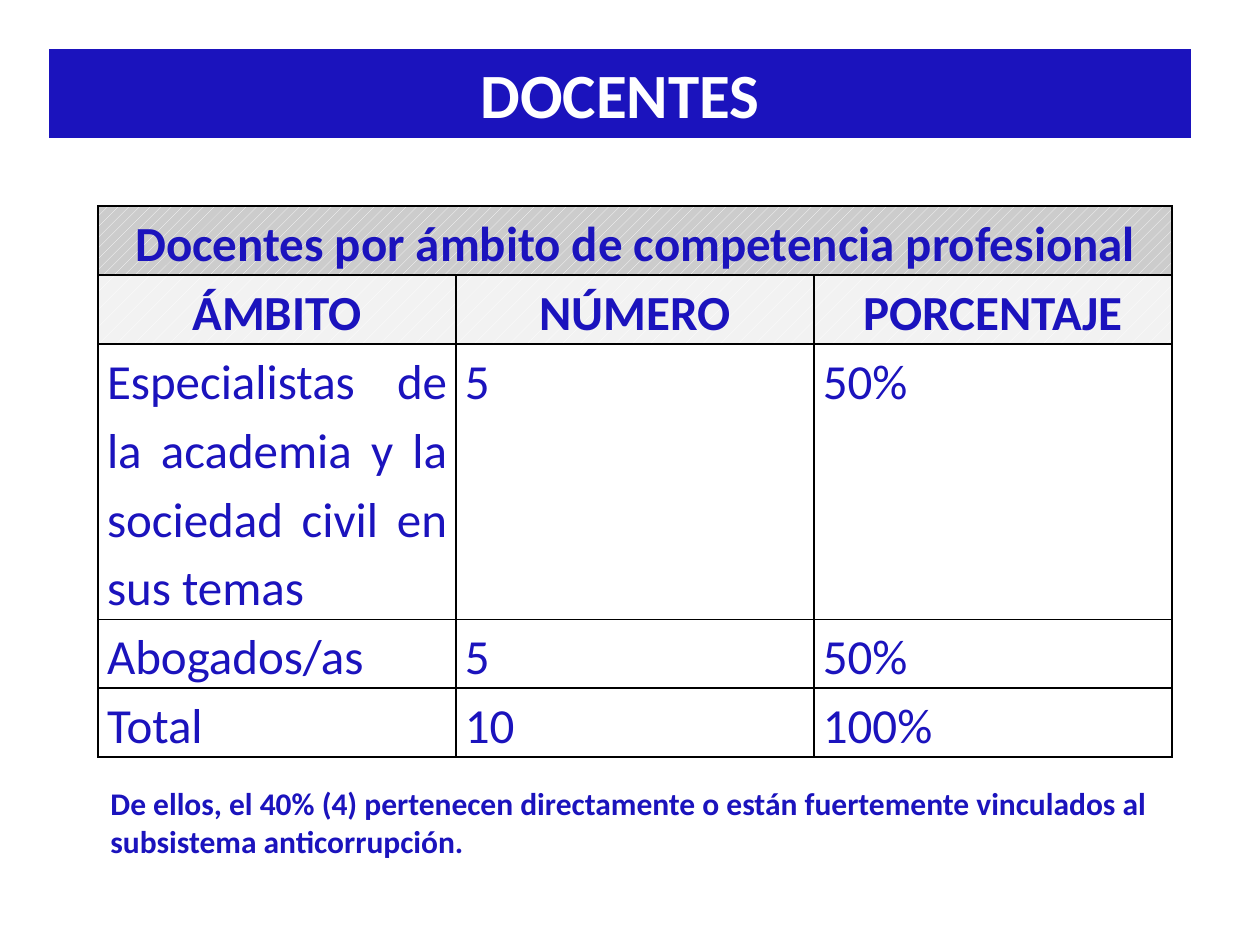
from lxml import etree
from pptx import Presentation
from pptx import util as u
from pptx.dml.color import RGBColor
from pptx.enum import dml, text
from pptx.oxml.ns import qn

PX = 914400 / 126
BLUE = RGBColor(0x1B, 0x13, 0xBD)
WHITE = RGBColor(0xFF, 0xFF, 0xFF)
GREY = RGBColor(0xCC, 0xCC, 0xCC)
PALE = RGBColor(0xF2, 0xF2, 0xF2)
BLACK = RGBColor(0, 0, 0)
FONT = "Calibri"

HEADING = "Docentes por ámbito de competencia profesional"
COLUMNS = ["ÁMBITO", "NÚMERO", "PORCENTAJE"]
ROWS = [
    ["Especialistas de la academia y la sociedad civil en sus temas", "5", "50%"],
    ["Abogados/as", "5", "50%"],
    ["Total", "10", "100%"],
]
ROW_HEIGHTS = [68, 68, 270, 68, 68]
NOTE = ("De ellos, el 40% (4) pertenecen directamente o están fuertemente "
        "vinculados al subsistema anticorrupción.")


def px(n):
    return u.Emu(round(n * PX))


def add_run(p, words, size, color=BLUE, bold=True):
    r = p.add_run()
    r.text = words
    r.font.name = FONT
    r.font.size = u.Pt(size)
    r.font.bold = bold
    r.font.color.rgb = color


def add_title(s, x, y, w, h):
    sp = s.shapes.title
    sp.left, sp.top, sp.width, sp.height = map(px, (x, y, w, h))
    sp.fill.solid()
    sp.fill.fore_color.rgb = BLUE
    tf = sp.text_frame
    tf.auto_size = text.MSO_AUTO_SIZE.NONE
    tf.vertical_anchor = text.MSO_ANCHOR.MIDDLE
    p = tf.paragraphs[0]
    p.alignment = text.PP_ALIGN.CENTER
    add_run(p, "DOCENTES", 36, WHITE)


def add_borders(cell):
    tc_pr = cell._tc.get_or_add_tcPr()
    for side in ("a:lnL", "a:lnR", "a:lnT", "a:lnB"):
        ln = etree.SubElement(tc_pr, qn(side), w=str(u.Pt(1)))
        fill = etree.SubElement(ln, qn("a:solidFill"))
        etree.SubElement(fill, qn("a:srgbClr"), val=str(BLACK))


def format_cell(cell, words, header=None):
    """Fill one cell; header is a (pattern, background colour) pair."""
    add_borders(cell)
    cell.margin_left = cell.margin_right = px(9)
    cell.margin_top = cell.margin_bottom = 0
    if header:
        cell.fill.patterned()
        cell.fill.pattern, cell.fill.back_color.rgb = header
        cell.fill.fore_color.rgb = WHITE
    else:
        cell.fill.background()
    p = cell.text_frame.paragraphs[0]
    p.alignment = text.PP_ALIGN.CENTER if header else text.PP_ALIGN.JUSTIFY
    p.line_spacing = 1.15
    if words:
        add_run(p, words, 28, bold=bool(header))


def add_teacher_table(s, x, y, w):
    grid = [[HEADING, "", ""], COLUMNS] + ROWS
    headers = {0: (dml.MSO_PATTERN.PERCENT_20, GREY),
               1: (dml.MSO_PATTERN.PERCENT_5, PALE)}
    frame = s.shapes.add_table(len(grid), len(COLUMNS), px(x), px(y),
                               px(w), px(sum(ROW_HEIGHTS)))
    table = frame.table
    table.first_row = table.horz_banding = False
    for row, height in zip(table.rows, ROW_HEIGHTS):
        row.height = px(height)
    for i, words in enumerate(grid):
        for j, word in enumerate(words):
            format_cell(table.cell(i, j), word, headers.get(i))
    table.cell(0, 0).merge(table.cell(0, len(COLUMNS) - 1))


def add_note(s, x, y, w, h):
    tf = s.shapes.add_textbox(*map(px, (x, y, w, h))).text_frame
    tf.word_wrap = True
    add_run(tf.paragraphs[0], NOTE, 18)


def main():
    prs = Presentation()
    prs.slide_width, prs.slide_height = px(1260), px(945)
    s = prs.slides.add_slide(prs.slide_layouts.get_by_name("Title Only"))
    add_title(s, 49, 49, 1142, 89)
    add_teacher_table(s, 98, 206, 1074)
    add_note(s, 98, 778, 1064, 89)
    prs.save("out.pptx")


if __name__ == "__main__":
    main()
